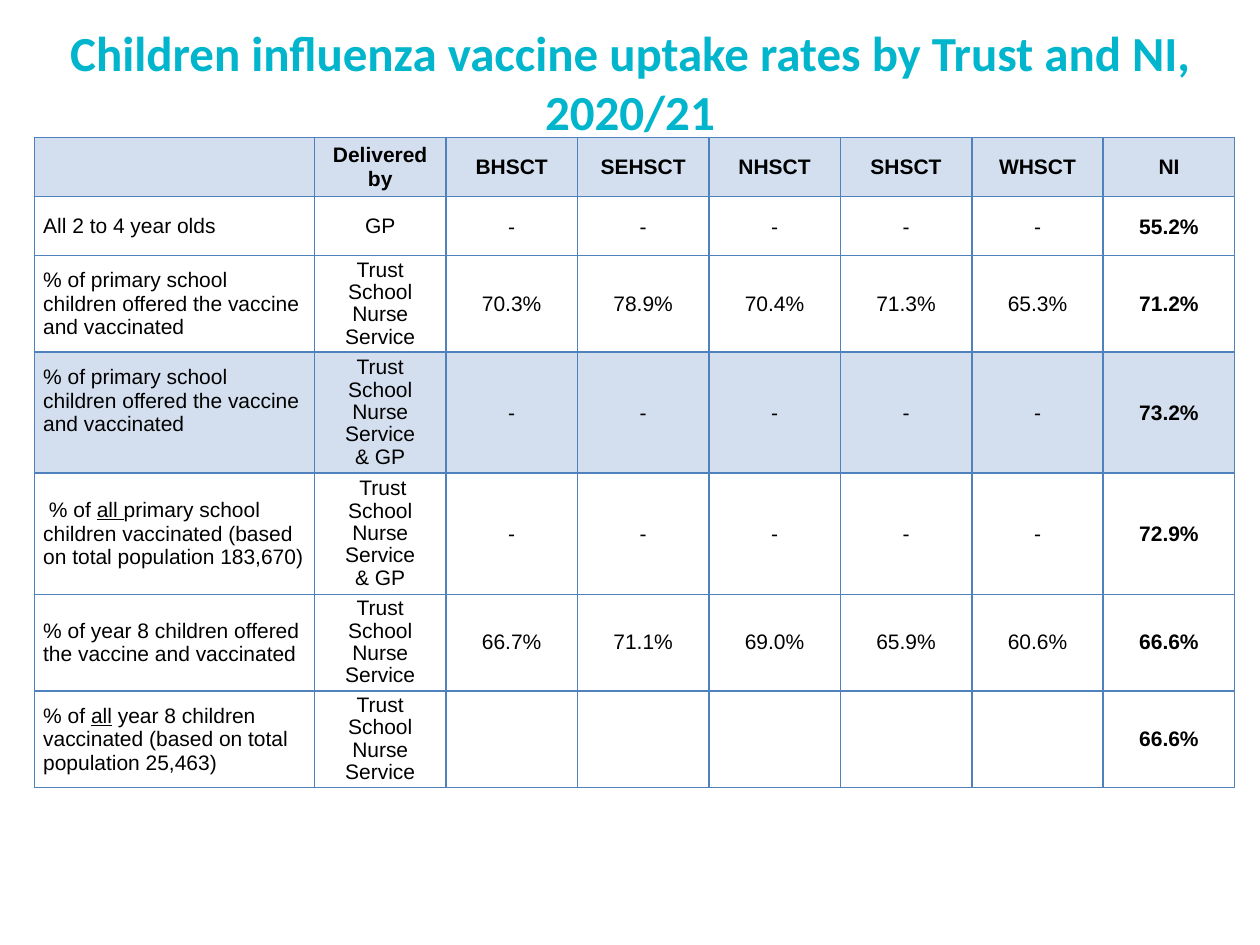
from lxml import etree
from pptx import Presentation, util as u
from pptx.dml.color import RGBColor
from pptx.enum import text
from pptx.oxml import ns

HUES = {"title": "00B5CC", "line": "4F81BD", "band": "D3DFEE", "ink": "000000"}
NURSE = "Trust School Nurse Service"
OFFER = "% of primary school children offered the vaccine and vaccinated"
DASH = ["-"] * 5


def add_run(para, words, size, face, hue, bold=False, under=False):
    run = para.add_run()
    run.text = words
    font = run.font
    font.size, font.name, font.bold = u.Pt(size), face, bold
    font.underline = under
    font.color.rgb = RGBColor.from_string(HUES[hue])


def add_edges(cell):
    props = cell._tc.get_or_add_tcPr()
    for side in ("lnL", "lnR", "lnT", "lnB"):
        edge = etree.SubElement(props, ns.qn("a:" + side), w=str(u.Pt(1)))
        fill = etree.SubElement(edge, ns.qn("a:solidFill"))
        etree.SubElement(fill, ns.qn("a:srgbClr"), val=HUES["line"])


deck = Presentation()
deck.slide_width, deck.slide_height = u.Cm(25.4), u.Cm(19.05)
slide = deck.slides.add_slide(deck.slide_layouts[6])

# Title, wide enough for its first line
box = slide.shapes.add_textbox(u.Cm(1), u.Cm(0.05), u.Cm(23.4), u.Cm(3.18))
frame = box.text_frame
frame.word_wrap = False
frame.margin_left = frame.margin_right = 0
frame.vertical_anchor = text.MSO_ANCHOR.MIDDLE
lines = ["Children influenza vaccine uptake rates by Trust and NI,", "2020/21"]
for n, line in enumerate(lines):
    para = frame.add_paragraph() if n else frame.paragraphs[0]
    para.alignment = text.PP_ALIGN.CENTER
    add_run(para, line, 28, "Calibri", "title", bold=True)

# Table content: a tuple holds runs, with the second one underlined;
# a line break in a string starts a new paragraph
rows = [
    ["", "Delivered by", "BHSCT", "SEHSCT", "NHSCT", "SHSCT", "WHSCT", "NI"],
    ["All 2 to 4 year olds", "GP", *DASH, "55.2%"],
    [OFFER, NURSE, "70.3%", "78.9%", "70.4%", "71.3%", "65.3%", "71.2%"],
    [OFFER, NURSE + "\n& GP", *DASH, "73.2%"],
    [(" % of ", "all ",
      "primary school children vaccinated (based on total population 183,670)"),
     " " + NURSE + "\n& GP", *DASH, "72.9%"],
    ["% of year 8 children offered the vaccine and vaccinated", NURSE,
     "66.7%", "71.1%", "69.0%", "65.9%", "60.6%", "66.6%"],
    [("% of ", "all",
      " year 8 children vaccinated (based on total population 25,463)"),
     NURSE, *[""] * 5, "66.6%"],
]
wide = [5.64] + [2.65] * 7
high = [1.19, 1.19, 1.95, 2.44, 2.44, 1.95, 1.95]

# Table grid
grid = slide.shapes.add_table(len(high), len(wide), u.Cm(0.7), u.Cm(2.77),
                              u.Cm(sum(wide)), u.Cm(sum(high))).table
grid.first_row = grid.horz_banding = False
for col, size in zip(grid.columns, wide):
    col.width = u.Cm(size)
for row, size in zip(grid.rows, high):
    row.height = u.Cm(size)

# Table cells
for r, row in enumerate(rows):
    for c, item in enumerate(row):
        cell = grid.cell(r, c)
        add_edges(cell)
        if r in (0, 3):
            cell.fill.solid()
            cell.fill.fore_color.rgb = RGBColor.from_string(HUES["band"])
        else:
            cell.fill.background()
        cell.vertical_anchor = text.MSO_ANCHOR.MIDDLE
        tight = r in (1, 2, 3) and c > 1
        cell.margin_left = cell.margin_right = u.Cm(0.03 if tight else 0.17)
        cell.margin_top = u.Cm(0.03 if tight else 0)
        # The label of the shaded row sits above the middle
        cell.margin_bottom = u.Cm(0.48 if (r, c) == (3, 0) else 0)
        if not item:
            continue
        parts = [item] if isinstance(item, tuple) else [(p,) for p in item.split("\n")]
        for n, runs in enumerate(parts):
            frame = cell.text_frame
            para = frame.add_paragraph() if n else frame.paragraphs[0]
            para.alignment = text.PP_ALIGN.CENTER if c else text.PP_ALIGN.LEFT
            # Tall service cells are set tighter to keep the row height
            if c == 1 and r > 1:
                para.line_spacing = 0.95
            for k, words in enumerate(runs):
                add_run(para, words, 12, "Arial", "ink",
                        bold=r == 0 or c == 7, under=k == 1)

deck.save("out.pptx")
